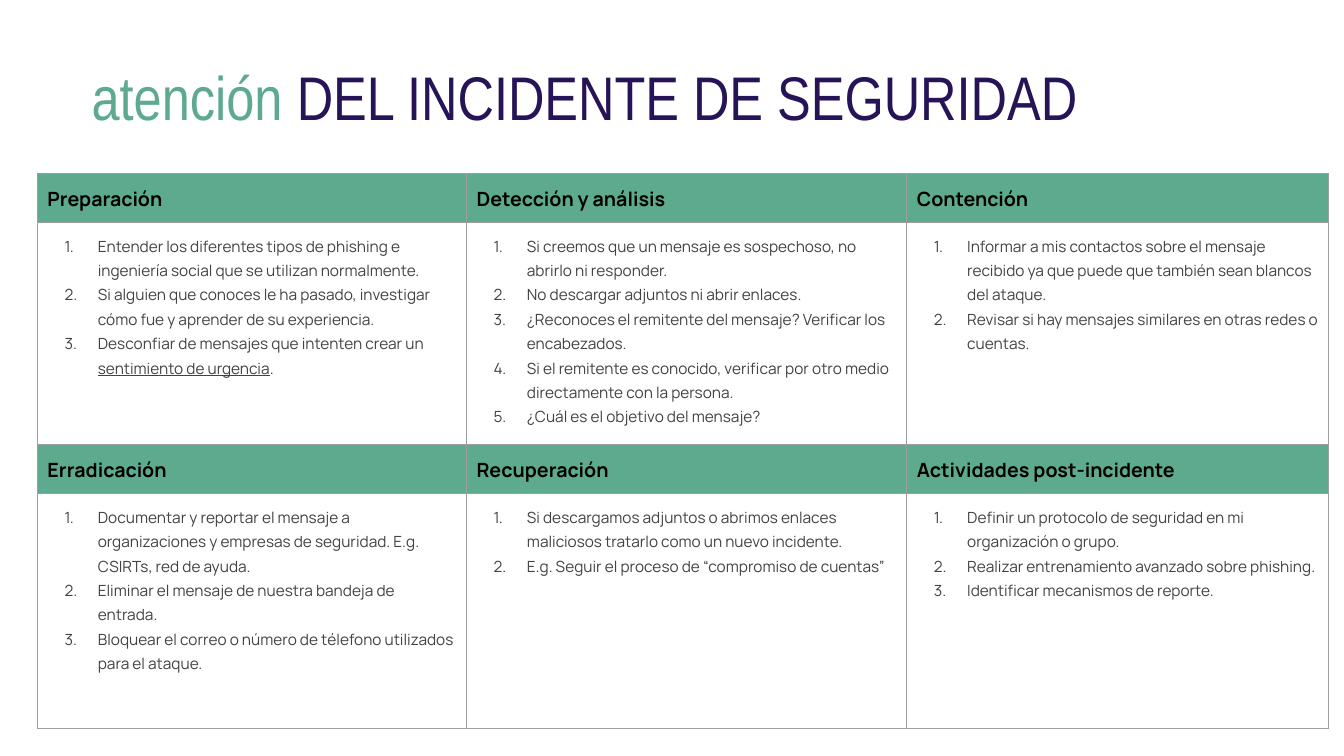
"""Builds the slide on the six phases of handling a security incident."""
from lxml import etree
from pptx import Presentation
from pptx.dml.color import RGBColor
from pptx.enum.text import MSO_ANCHOR
from pptx.oxml.ns import qn
from pptx.util import Pt

MIDDLE = MSO_ANCHOR.MIDDLE
GREEN, PURPLE, BLACK, GREY, RULE = "5EAA8F", "271357", "000000", "424242", "9E9E9E"
COLUMN_WIDTHS = (306.5, 314.5, 301.5)
HEADING_HEIGHT = 35
STEPS_HEIGHTS = (158.5, 168)

PHASES = [
    [
        ("Preparación", [
            "Entender los diferentes tipos de phishing e ingeniería social que se utilizan normalmente.",
            "Si alguien que conoces le ha pasado, investigar cómo fue y aprender de su experiencia.",
            "Desconfiar de mensajes que intenten crear un _sentimiento de urgencia_.",
        ]),
        ("Detección y análisis", [
            "Si creemos que un mensaje es sospechoso, no abrirlo ni responder.",
            "No descargar adjuntos ni abrir enlaces.",
            "¿Reconoces el remitente del mensaje? Verificar los encabezados.",
            "Si el remitente es conocido, verificar por otro medio directamente con la persona.",
            "¿Cuál es el objetivo del mensaje?",
        ]),
        ("Contención", [
            "Informar a mis contactos sobre el mensaje recibido ya que puede que también sean blancos del ataque.",
            "Revisar si hay mensajes similares en otras redes o cuentas.",
        ]),
    ],
    [
        ("Erradicación", [
            "Documentar y reportar el mensaje a organizaciones y empresas de seguridad. E.g. CSIRTs, red de ayuda.",
            "Eliminar el mensaje de nuestra bandeja de entrada.",
            "Bloquear el correo o número de télefono utilizados para el ataque.",
        ]),
        ("Recuperación", [
            "Si descargamos adjuntos o abrimos enlaces maliciosos tratarlo como un nuevo incidente.",
            "E.g. Seguir el proceso de “compromiso de cuentas”",
        ]),
        ("Actividades post-incidente", [
            "Definir un protocolo de seguridad en mi organización o grupo.",
            "Realizar entrenamiento avanzado sobre phishing.",
            "Identificar mecanismos de reporte.",
        ]),
    ],
]


def rgb(value):
    return RGBColor.from_string(value)


class IncidentSlide:
    """Holds the style and the current slide."""

    title_font, body_font = "Arial Narrow", "Manrope"

    def __init__(self, slide):
        self.slide = slide

    def style(self, paragraph, font, size, spacing, color=None, bold=False):
        paragraph.line_spacing = spacing
        paragraph.font.name = font
        paragraph.font.size = Pt(size)
        paragraph.font.bold = bold
        if color:
            paragraph.font.color.rgb = rgb(color)

    def title(self, parts, left, top, width, height):
        frame = self.slide.shapes.add_textbox(Pt(left), Pt(top), Pt(width), Pt(height)).text_frame
        frame.word_wrap = True
        frame.vertical_anchor = MIDDLE
        paragraph = frame.paragraphs[0]
        self.style(paragraph, self.title_font, 44, 0.9)
        for text, color in parts:
            run = paragraph.add_run()
            run.text = text
            run.font.color.rgb = rgb(color)

    def table(self, left, top, widths, heights):
        table = self.slide.shapes.add_table(
            len(heights), len(widths), Pt(left), Pt(top), Pt(sum(widths)), Pt(sum(heights))).table
        table.first_row = table.horz_banding = False
        for column, width in zip(table.columns, widths):
            column.width = Pt(width)
        for row, height in zip(table.rows, heights):
            row.height = Pt(height)
        return table

    def frame_cell(self, cell):
        cell.margin_left = cell.margin_right = cell.margin_top = cell.margin_bottom = Pt(7.2)
        properties = cell._tc.get_or_add_tcPr()
        for side in ("a:lnL", "a:lnR", "a:lnT", "a:lnB"):
            line = etree.SubElement(properties, qn(side), w=str(Pt(0.75)))
            fill = etree.SubElement(line, qn("a:solidFill"))
            etree.SubElement(fill, qn("a:srgbClr"), val=RULE)

    def heading(self, cell, text):
        self.frame_cell(cell)
        cell.fill.solid()
        cell.fill.fore_color.rgb = rgb(GREEN)
        paragraph = cell.text_frame.paragraphs[0]
        paragraph.add_run().text = text
        self.style(paragraph, self.body_font, 14, 1.08, BLACK, bold=True)

    def number(self, paragraph):
        properties = paragraph._p.get_or_add_pPr()
        properties.set("marL", str(Pt(36)))
        properties.set("indent", str(Pt(-23.8)))
        color = etree.SubElement(properties, qn("a:buClr"))
        etree.SubElement(color, qn("a:srgbClr"), val=GREY)
        etree.SubElement(properties, qn("a:buFont"), typeface=self.body_font)
        etree.SubElement(properties, qn("a:buAutoNum"), type="arabicPeriod")

    def steps(self, cell, steps):
        self.frame_cell(cell)
        cell.fill.background()
        frame = cell.text_frame
        for index, step in enumerate(steps):
            paragraph = frame.add_paragraph() if index else frame.paragraphs[0]
            self.number(paragraph)
            self.style(paragraph, self.body_font, 11, 1.15, GREY)
            for position, text in enumerate(step.split("_")):
                run = paragraph.add_run()
                run.text = text
                if position % 2:
                    run.font.underline = True


def main():
    deck = Presentation()
    deck.slide_width, deck.slide_height = Pt(960), Pt(540)
    incident = IncidentSlide(deck.slides.add_slide(deck.slide_layouts[6]))
    heights = [height for steps in STEPS_HEIGHTS for height in (HEADING_HEIGHT, steps)]
    phases = incident.table(26.7, 123.8, COLUMN_WIDTHS, heights)
    for band, row in enumerate(PHASES):
        for column, (name, steps) in enumerate(row):
            incident.heading(phases.cell(2 * band, column), name)
            incident.steps(phases.cell(2 * band + 1, column), steps)
    incident.title([("atención", GREEN), (" DEL INCIDENTE DE SEGURIDAD", PURPLE)],
                   58.3, 19.4, 843.8, 104.4)
    deck.save("out.pptx")


if __name__ == "__main__":
    main()
